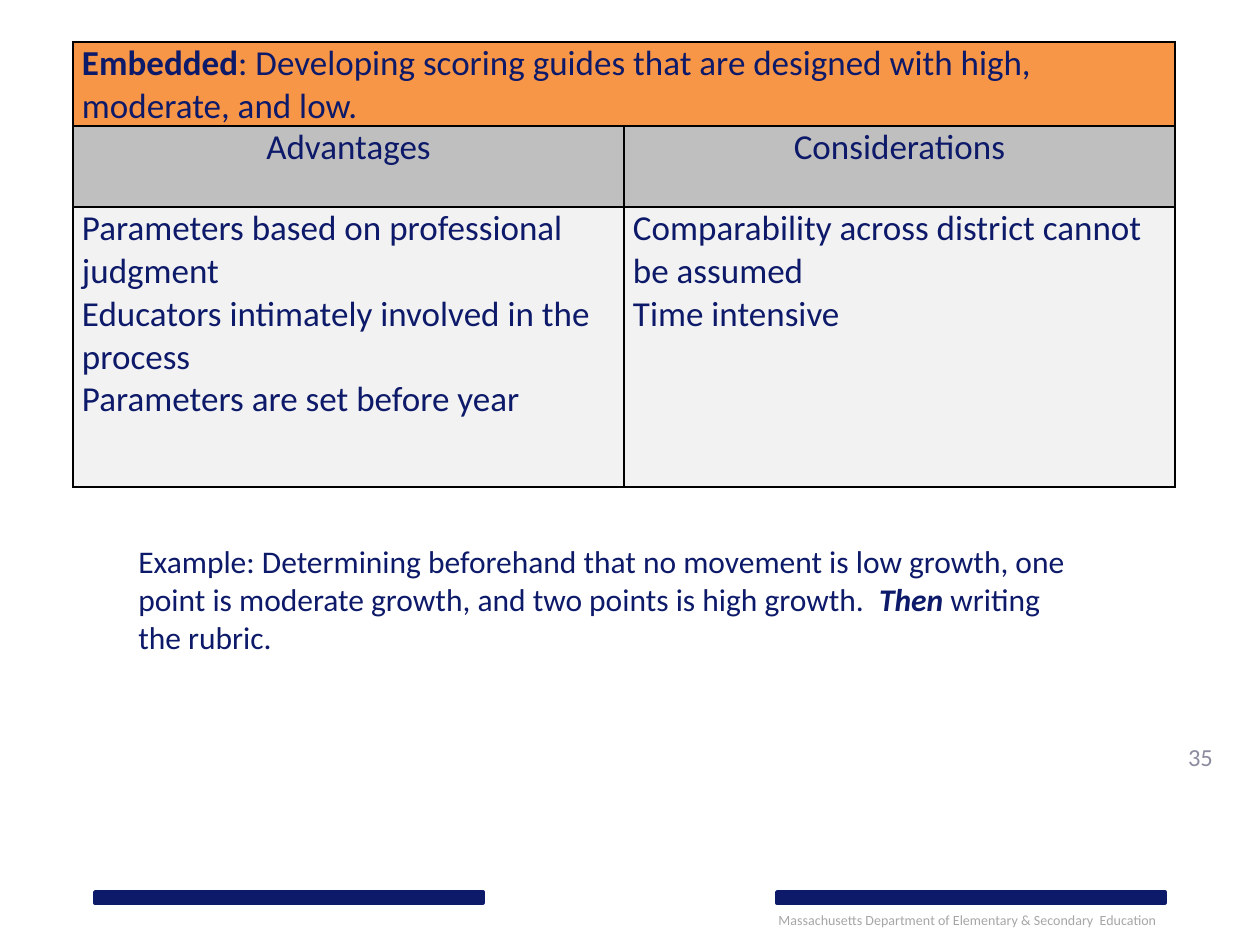
"""Build the slide on embedded scoring guides, with its table, example and footer."""
from dataclasses import dataclass

from lxml.etree import SubElement
from pptx import Presentation
from pptx.dml.color import RGBColor
from pptx.enum.shapes import MSO_SHAPE as Preset
from pptx.enum.text import MSO_ANCHOR as Anchor, PP_ALIGN as Align
from pptx.oxml.ns import qn
from pptx.util import Emu, Pt

EMU_PER_PX = 914400 / 126
COLOURS = {
    "navy": "0D1969", "orange": "F79646", "silver": "BFBFBF", "pale": "F2F2F2",
    "border": "000000", "footer": "A6A6A6", "number": "8C8CA1",
}


@dataclass(frozen=True)
class Span:
    text: str
    bold: bool = False
    italic: bool = False


@dataclass(frozen=True)
class Note:
    box: tuple[int, int, int, int]
    spans: tuple[Span, ...]
    size: int
    colour: str
    align: Align = Align.LEFT
    anchor: Anchor = Anchor.TOP


@dataclass(frozen=True)
class Entry:
    row: int
    column: int
    paragraphs: tuple[tuple[Span, ...], ...]
    fill: str
    align: Align = Align.LEFT


def px(length: int) -> Emu:
    return Emu(round(length * EMU_PER_PX))


def rgb(colour: str) -> RGBColor:
    return RGBColor.from_string(COLOURS[colour])


def apply(target, formats: dict) -> None:
    for attribute, value in formats.items():
        setattr(target, attribute, value)


def write(paragraph, spans: tuple[Span, ...], size: int, colour: str, align: Align) -> None:
    paragraph.alignment = align
    for span in spans:
        run = paragraph.add_run()
        run.text = span.text
        apply(run.font, {"name": "Calibri", "size": Pt(size),
                         "bold": span.bold, "italic": span.italic})
        run.font.color.rgb = rgb(colour)


def draw_bar(slide, left: int) -> None:
    bar = slide.shapes.add_shape(Preset.RECTANGLE, px(left), px(892), px(388), px(11))
    bar.shadow.inherit = False
    bar.fill.solid()
    bar.fill.fore_color.rgb = rgb("navy")
    bar.line.color.rgb = rgb("navy")
    bar.line.width = Pt(2)


def draw_note(slide, note: Note) -> None:
    frame = slide.shapes.add_textbox(*map(px, note.box)).text_frame
    apply(frame, {"word_wrap": True, "vertical_anchor": note.anchor})
    write(frame.paragraphs[0], note.spans, note.size, note.colour, note.align)


def draw_borders(cell) -> None:
    properties = cell._tc.get_or_add_tcPr()
    for position, side in enumerate(("a:lnL", "a:lnR", "a:lnT", "a:lnB")):
        edge = properties.makeelement(qn(side), {"w": str(Pt(1))})
        properties.insert(position, edge)
        fill = SubElement(edge, qn("a:solidFill"))
        SubElement(fill, qn("a:srgbClr"), val=COLOURS["border"])


def draw_entry(table, entry: Entry) -> None:
    cell = table.cell(entry.row, entry.column)
    cell.fill.solid()
    cell.fill.fore_color.rgb = rgb(entry.fill)
    frame = cell.text_frame
    for position, spans in enumerate(entry.paragraphs):
        paragraph = frame.add_paragraph() if position else frame.paragraphs[0]
        write(paragraph, spans, 20, "navy", entry.align)


def draw_comparison(slide, entries: tuple[Entry, ...]) -> None:
    heights = (81, 81, 280)
    table = slide.shapes.add_table(
        len(heights), 2, px(73), px(42), px(1102), px(sum(heights))).table
    apply(table, {"first_row": False, "horz_banding": False})
    for row, height in zip(table.rows, heights):
        row.height = px(height)
    for column in table.columns:
        column.width = px(551)
    table.cell(0, 0).merge(table.cell(0, 1))
    for entry in entries:
        draw_entry(table, entry)
    for cell in table.iter_cells():
        apply(cell, {"margin_left": px(9), "margin_right": px(9),
                     "margin_top": 0, "margin_bottom": 0})
        draw_borders(cell)


def lines(*texts: str) -> tuple[tuple[Span, ...], ...]:
    return tuple((Span(text),) for text in texts)


ENTRIES = (
    Entry(0, 0, ((Span("Embedded", bold=True),
                  Span(": Developing scoring guides that are designed with high, "
                       "moderate, and low.")),), "orange"),
    Entry(1, 0, lines("Advantages"), "silver", Align.CENTER),
    Entry(1, 1, lines("Considerations"), "silver", Align.CENTER),
    Entry(2, 0, lines("Parameters based on professional judgment",
                      "Educators intimately involved in the process",
                      "Parameters are set before year"), "pale"),
    Entry(2, 1, lines("Comparability across district cannot be assumed",
                      "Time intensive"), "pale"),
)
NOTES = (
    Note((766, 905, 410, 30),
         (Span("Massachusetts Department of Elementary & Secondary  Education"),),
         8, "footer"),
    Note((1164, 725, 73, 63), (Span("35"),), 14, "number", Align.CENTER, Anchor.MIDDLE),
    Note((126, 536, 955, 127),
         (Span("Example: Determining beforehand that no movement is low growth, one point "
               "is moderate growth, and two points is high growth.  "),
          Span("Then", bold=True, italic=True), Span(" writing the rubric.")),
         18, "navy"),
)


def main() -> None:
    deck = Presentation()
    apply(deck, {"slide_width": px(1260), "slide_height": px(945)})
    slide = deck.slides.add_slide(deck.slide_layouts[6])
    for left in (777, 95):
        draw_bar(slide, left)
    for note in NOTES:
        draw_note(slide, note)
    draw_comparison(slide, ENTRIES)
    deck.save("out.pptx")


if __name__ == "__main__":
    main()
